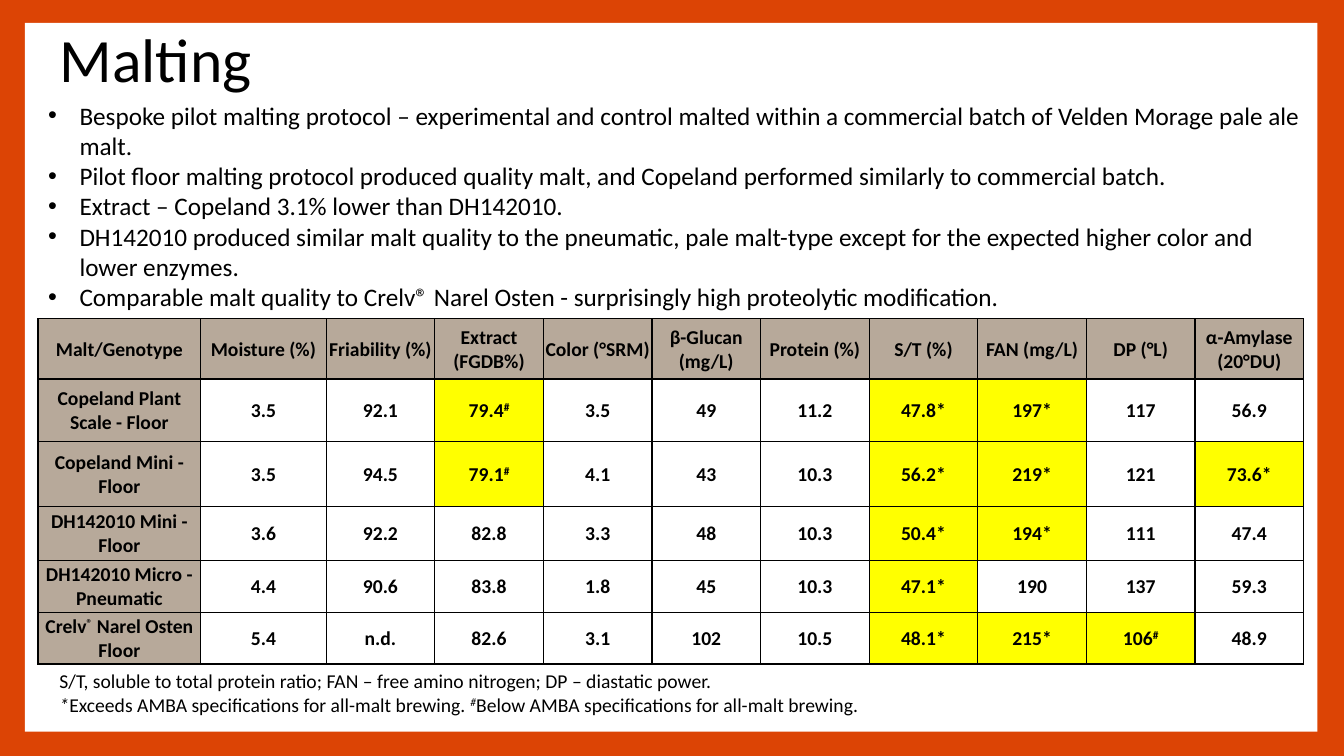
from itertools import groupby

from lxml import etree
from pptx import Presentation
from pptx.dml.color import RGBColor
from pptx.enum.shapes import MSO_SHAPE
from pptx.enum.text import MSO_ANCHOR, MSO_AUTO_SIZE, PP_ALIGN
from pptx.oxml.ns import qn
from pptx.util import Cm, Pt

RECTANGLE = MSO_SHAPE.RECTANGLE
MIDDLE, TOP = MSO_ANCHOR.MIDDLE, MSO_ANCHOR.TOP
LEFT, CENTER = PP_ALIGN.LEFT, PP_ALIGN.CENTER
NO_AUTOFIT = MSO_AUTO_SIZE.NONE

FONT = "Calibri"
COLORS = {
    "frame": "DC4405",
    "panel": "FFFFFF",
    "text": "000000",
    "label": "B7A99A",
    "flag": "FFFF00",
}

BULLETS = [
    "Bespoke pilot malting protocol – experimental and control malted within "
    "a commercial batch of Velden Morage pale ale malt.",
    "Pilot floor malting protocol produced quality malt, and Copeland "
    "performed similarly to commercial batch.",
    "Extract – Copeland 3.1% lower than DH142010.",
    "DH142010 produced similar malt quality to the pneumatic, pale malt-type "
    "except for the expected higher color and lower enzymes.",
    "Comparable malt quality to Crelv® Narel Osten - surprisingly high "
    "proteolytic modification.",
]
MALT_ROWS = [
    ["Malt/Genotype", "Moisture (%)", "Friability (%)", "Extract (FGDB%)",
     "Color (°SRM)", "β-Glucan (mg/L)", "Protein (%)", "S/T (%)",
     "FAN (mg/L)", "DP (°L)", "α-Amylase (20°DU)"],
    ["Copeland Plant Scale - Floor", "3.5", "92.1", "79.4#", "3.5", "49",
     "11.2", "47.8*", "197*", "117", "56.9"],
    ["Copeland Mini - Floor", "3.5", "94.5", "79.1#", "4.1", "43",
     "10.3", "56.2*", "219*", "121", "73.6*"],
    ["DH142010 Mini - Floor", "3.6", "92.2", "82.8", "3.3", "48",
     "10.3", "50.4*", "194*", "111", "47.4"],
    ["DH142010 Micro - Pneumatic", "4.4", "90.6", "83.8", "1.8", "45",
     "10.3", "47.1*", "190", "137", "59.3"],
    ["Crelv® Narel Osten Floor", "5.4", "n.d.", "82.6", "3.1", "102",
     "10.5", "48.1*", "215*", "106#", "48.9"],
]
ROW_HEIGHTS = [1.52, 1.57, 1.64, 1.37, 1.3, 1.3]
LABEL_WIDTH, MOISTURE_WIDTH = 4.1, 3.16
FOOTNOTES = [
    "S/T, soluble to total protein ratio; FAN – free amino nitrogen; "
    "DP – diastatic power.",
    "*Exceeds AMBA specifications for all-malt brewing. "
    "#Below AMBA specifications for all-malt brewing.",
]


def color(name):
    return RGBColor.from_string(COLORS[name])


def add_text(para, text, size, bold=False, raised="", slanted=""):
    """Add runs, with the characters in raised as superscript and in slanted as italic."""
    groups = groupby(text, key=lambda char: (char in raised, char in slanted))
    for (is_raised, is_slanted), chars in groups:
        span = para.add_run()
        span.text = "".join(chars)
        font = span.font
        font.name, font.size = FONT, Pt(size)
        font.bold, font.italic = bold, is_slanted
        font.color.rgb = color("text")
        if is_raised:
            span._r.get_or_add_rPr().set("baseline", "30000")


def place(shape, left, top, width, height):
    shape.left, shape.top = Cm(left), Cm(top)
    shape.width, shape.height = Cm(width), Cm(height)


def paragraphs(frame, count):
    """Return the first paragraph and as many new ones as needed."""
    return [frame.paragraphs[0]] + [frame.add_paragraph() for _ in range(count - 1)]


def add_panel(page, left, top, width, height):
    background = page.background.fill
    background.solid()
    background.fore_color.rgb = color("frame")
    panel = page.shapes.add_shape(RECTANGLE, Cm(left), Cm(top), Cm(width), Cm(height))
    panel.shadow.inherit = False
    panel.fill.solid()
    panel.fill.fore_color.rgb = color("panel")
    panel.line.fill.background()
    page.shapes._spTree.insert(2, panel._element)  # behind the placeholders


def fill_title(page, left, top, width, height):
    title = page.shapes.title
    place(title, left, top, width, height)
    frame = title.text_frame
    frame.auto_size = NO_AUTOFIT
    frame.vertical_anchor = MIDDLE
    para = frame.paragraphs[0]
    para.alignment, para.line_spacing = LEFT, 0.9
    add_text(para, "Malting", 44)


def fill_bullets(page, left, top, width, height):
    body = page.placeholders[1]
    place(body, left, top, width, height)
    frame = body.text_frame
    frame.auto_size = NO_AUTOFIT
    frame.vertical_anchor = TOP
    for para, text in zip(paragraphs(frame, len(BULLETS)), BULLETS):
        para.space_before, para.line_spacing = Pt(0), 1.0
        properties = para._p.get_or_add_pPr()
        properties.set("marL", str(Cm(0.79)))
        properties.set("indent", str(Cm(-0.79)))
        etree.SubElement(properties, qn("a:buFont"), typeface="Arial")
        etree.SubElement(properties, qn("a:buChar"), char="•")
        add_text(para, text, 18)


def add_borders(cell):
    properties = cell._tc.get_or_add_tcPr()
    for index, side in enumerate(("a:lnL", "a:lnR", "a:lnT", "a:lnB")):
        line = etree.Element(qn(side), w=str(Pt(1)))
        fill = etree.SubElement(line, qn("a:solidFill"))
        etree.SubElement(fill, qn("a:srgbClr"), val=COLORS["text"])
        properties.insert(index, line)


def fill_cell(cell, text, is_label):
    cell.margin_left = cell.margin_right = cell.margin_top = Cm(0.03)
    cell.margin_bottom = 0
    cell.vertical_anchor = MIDDLE
    if is_label or text.endswith(("*", "#")):
        cell.fill.solid()
        cell.fill.fore_color.rgb = color("label" if is_label else "flag")
    else:
        cell.fill.background()
    add_borders(cell)
    para = cell.text_frame.paragraphs[0]
    para.alignment = CENTER
    add_text(para, text, 14, bold=True, raised="#®")


def add_malt_table(page, left, top, width, height):
    column_count = len(MALT_ROWS[0])
    table = page.shapes.add_table(
        len(MALT_ROWS), column_count, Cm(left), Cm(top), Cm(width), Cm(height)).table
    table.first_row = table.horz_banding = False
    rest = (width - LABEL_WIDTH - MOISTURE_WIDTH) / (column_count - 2)
    widths = [LABEL_WIDTH, MOISTURE_WIDTH] + [rest] * (column_count - 2)
    for column, column_width in zip(table.columns, widths):
        column.width = Cm(column_width)
    for row, row_height in zip(table.rows, ROW_HEIGHTS):
        row.height = Cm(row_height)
    for row_index, values in enumerate(MALT_ROWS):
        for column_index, text in enumerate(values):
            is_label = row_index == 0 or column_index == 0
            fill_cell(table.cell(row_index, column_index), text, is_label)


def add_footnotes(page, left, top, width, height):
    box = page.shapes.add_textbox(Cm(left), Cm(top), Cm(width), Cm(height))
    frame = box.text_frame
    frame.word_wrap = True
    for para, text in zip(paragraphs(frame, len(FOOTNOTES)), FOOTNOTES):
        add_text(para, text, 14, raised="#", slanted="*#")


def main():
    deck = Presentation()
    deck.slide_width, deck.slide_height = Cm(33.87), Cm(19.05)
    page = deck.slides.add_slide(deck.slide_layouts[1])
    add_panel(page, 0.63, 0.58, 32.57, 17.86)
    fill_title(page, 1.25, 0, 22.86, 3.17)
    fill_bullets(page, 0.96, 2.39, 32.26, 5.64)
    add_malt_table(page, 0.96, 8.03, 31.9, sum(ROW_HEIGHTS))
    add_footnotes(page, 1.25, 16.74, 26.92, 1.45)
    deck.save("out.pptx")


if __name__ == "__main__":
    main()
